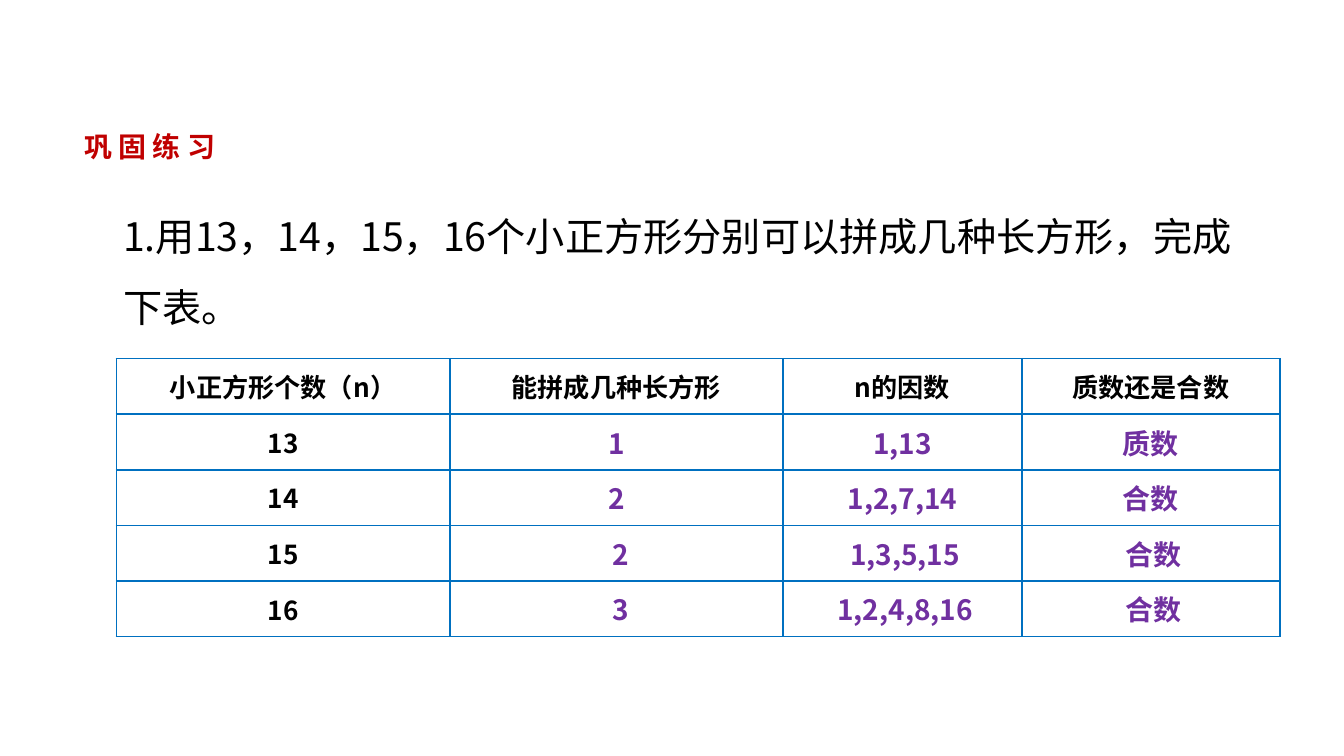
from lxml.etree import SubElement
from pptx import Presentation
from pptx.dml.color import RGBColor
from pptx.enum.text import MSO_ANCHOR, MSO_AUTO_SIZE, PP_ALIGN
from pptx.oxml import parse_xml
from pptx.oxml.ns import nsdecls, qn
from pptx.util import Cm, Pt

# Content
HEADING = "巩 固 练 习"
QUESTION = "1.用13，14，15，16个小正方形分别可以拼成几种长方形，完成下表。"
HEADERS = ["小正方形个数（n）", "能拼成几种长方形", "n的因数", "质数还是合数"]
ANSWERS = {
    "13": ["1", "1,13", "质数"],
    "14": ["2", "1,2,7,14", "合数"],
    "15": ["2", "1,3,5,15", "合数"],
    "16": ["3", "1,2,4,8,16", "合数"],
}

# Look and measures (cm)
FONT = "Noto Sans CJK SC"
BLACK, RED, PURPLE, BLUE = "000000", "C00000", "7030A0", "0070C0"
SLIDE_WIDTH, SLIDE_HEIGHT = 25.4, 14.29
GRID_LEFT, GRID_TOP, ROW_HEIGHT = 2.2, 6.78, 1.05
GRID_COLUMNS = [6.3, 6.3, 4.51, 4.88]
LATE_COLUMNS = [6.3, 4.45, 4.95]
LATE_SHIFT = 0.08
PLAIN_TABLE = "{2D5ABB26-0587-4C30-8999-92F81FD0307C}"


def color(hex_value):
    return RGBColor.from_string(hex_value)


def style(paragraph, size, hex_value, bold=False, align=PP_ALIGN.LEFT):
    paragraph.alignment = align
    font = paragraph.font
    font.name, font.size, font.bold = FONT, Pt(size), bold
    font.color.rgb = color(hex_value)
    defaults = paragraph._p.pPr.find(qn("a:defRPr"))
    SubElement(defaults, qn("a:ea")).set("typeface", FONT)


def fill_frame(frame, text, size, hex_value, bold=False):
    frame.word_wrap = True
    frame.auto_size = MSO_AUTO_SIZE.NONE
    frame.vertical_anchor = MSO_ANCHOR.TOP
    frame.margin_left = frame.margin_right = Cm(0.19)
    frame.margin_top = frame.margin_bottom = Cm(0.1)
    frame.text = text
    style(frame.paragraphs[0], size, hex_value, bold)


def add_borders(cell, hex_value):
    for position, side in enumerate(("lnL", "lnR", "lnT", "lnB")):
        line = parse_xml(
            f'<a:{side} {nsdecls("a")} w="12700"><a:solidFill>'
            f'<a:srgbClr val="{hex_value}"/></a:solidFill></a:{side}>')
        cell._tc.get_or_add_tcPr().insert(position, line)


def add_grid(slide, rows, left, top, columns, size, hex_value, border=None):
    table = slide.shapes.add_table(
        len(rows), len(columns), Cm(left), Cm(top),
        Cm(sum(columns)), Cm(ROW_HEIGHT * len(rows))).table
    table.first_row = table.horz_banding = False
    table._tbl.tblPr.find(qn("a:tableStyleId")).text = PLAIN_TABLE
    for column, width in zip(table.columns, columns):
        column.width = Cm(width)
    for r, texts in enumerate(rows):
        table.rows[r].height = Cm(ROW_HEIGHT)
        for c, text in enumerate(texts):
            cell = table.cell(r, c)
            cell.fill.background()
            cell.vertical_anchor = MSO_ANCHOR.MIDDLE
            cell.margin_top = cell.margin_bottom = Cm(0.1)
            if text:
                cell.text = text
            style(cell.text_frame.paragraphs[0], size, hex_value, True,
                  PP_ALIGN.CENTER)
            if border:
                add_borders(cell, border)


def main():
    deck = Presentation()
    deck.slide_width, deck.slide_height = Cm(SLIDE_WIDTH), Cm(SLIDE_HEIGHT)
    slide = deck.slides.add_slide(deck.slide_layouts[5])

    # Heading
    heading = slide.shapes.title
    heading.left, heading.top = Cm(1.4), Cm(2.34)
    heading.width, heading.height = Cm(3.6), Cm(0.84)
    fill_frame(heading.text_frame, HEADING, 15, RED, bold=True)

    # Question
    question = slide.shapes.add_textbox(Cm(2.14), Cm(3.47), Cm(21.72), Cm(2.9))
    fill_frame(question.text_frame, QUESTION, 21, BLACK)
    question.text_frame.paragraphs[0].line_spacing = 1.5

    # Exercise table with empty answer cells
    exercise = [HEADERS] + [[number, "", "", ""] for number in ANSWERS]
    add_grid(slide, exercise, GRID_LEFT, GRID_TOP, GRID_COLUMNS, 14, BLACK, BLUE)

    # One answer strip over each row; the last two sit slightly to the right
    for row, answer in enumerate(ANSWERS.values(), start=1):
        late = row > 2
        add_grid(slide, [answer],
                 GRID_LEFT + GRID_COLUMNS[0] + (LATE_SHIFT if late else 0),
                 GRID_TOP + row * ROW_HEIGHT,
                 LATE_COLUMNS if late else GRID_COLUMNS[1:], 15, PURPLE)

    deck.save("out.pptx")


if __name__ == "__main__":
    main()
